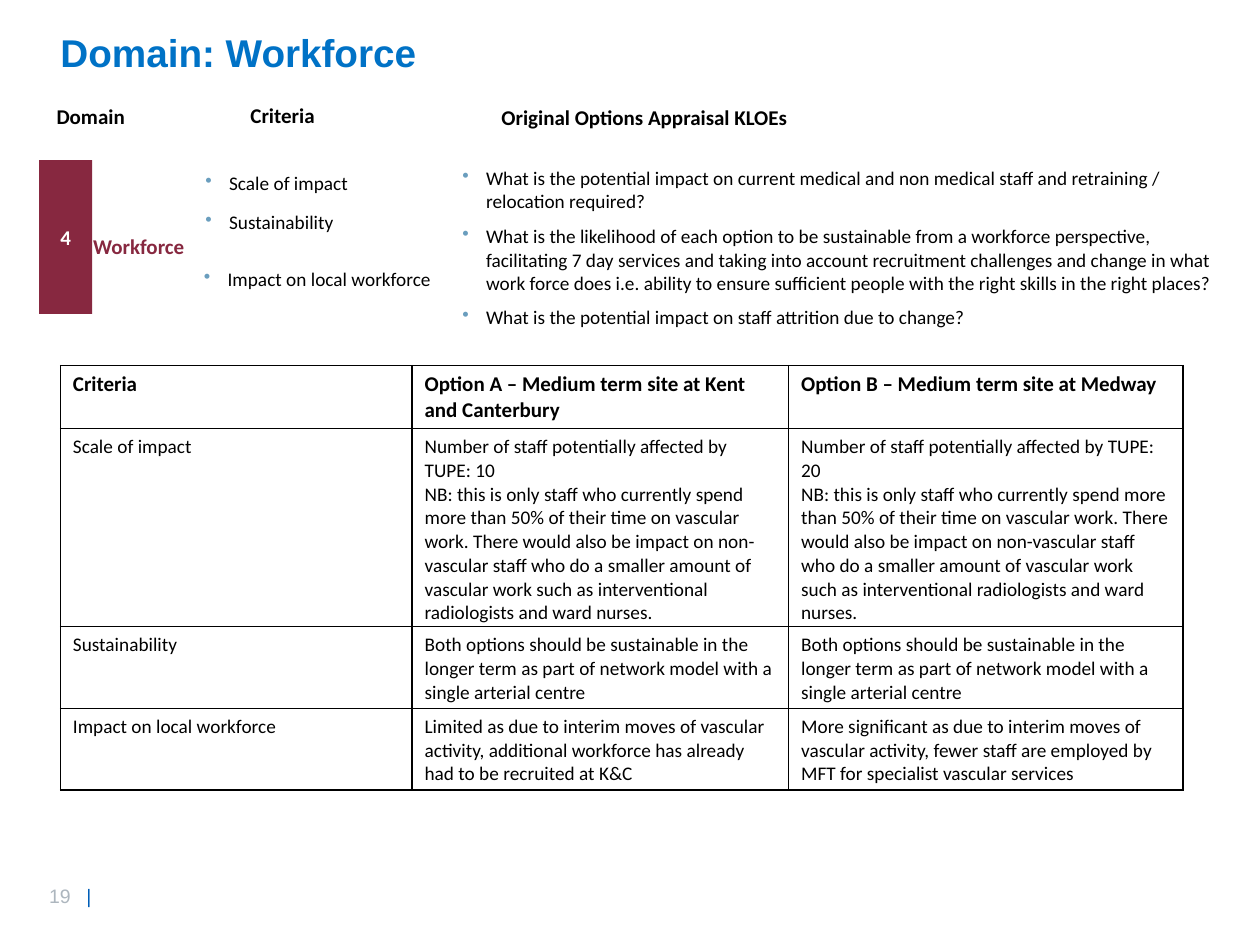
from dataclasses import dataclass

from lxml import etree
from pptx import Presentation
from pptx import util as u
from pptx.dml.color import RGBColor
from pptx.enum import shapes, text
from pptx.oxml.ns import qn


@dataclass(frozen=True)
class Theme:
    heading_font: str = "Arial"
    body_font: str = "Calibri"
    title: str = "0072C6"
    accent: str = "872840"
    bullet: str = "6A9EBE"
    ink: str = "000000"
    paper: str = "FFFFFF"
    number: str = "ADB6BE"
    bar: str = "005EB8"
    title_size: float = 22.1
    label_size: float = 12
    body_size: float = 11
    number_size: float = 11.1
    indent: float = 0.48
    pad_x: float = 0.25
    pad_y: float = 0.13


THEME = Theme()


def add_span(para, words, size, color, bold=False, font=THEME.body_font):
    span = para.add_run()
    span.text = words
    span.font.name = font
    span.font.size = u.Pt(size)
    span.font.bold = bold
    span.font.color.rgb = RGBColor.from_string(color)


def set_margins(target, x, top, bottom):
    target.margin_left = target.margin_right = u.Cm(x)
    target.margin_top = u.Cm(top)
    target.margin_bottom = u.Cm(bottom)


def add_para(page, box, pad_x=0, pad_y=0):
    frame = page.shapes.add_textbox(*map(u.Cm, box)).text_frame
    frame.word_wrap = True
    set_margins(frame, pad_x, pad_y, pad_y)
    return frame.paragraphs[0]


def add_bullet(para):
    props = para._p.get_or_add_pPr()
    props.set("marL", str(u.Cm(THEME.indent)))
    props.set("indent", str(-u.Cm(THEME.indent)))
    color = etree.SubElement(props, qn("a:buClr"))
    etree.SubElement(color, qn("a:srgbClr"), val=THEME.bullet)
    etree.SubElement(props, qn("a:buChar"), char="•")


def add_title(page, box, words):
    para = add_para(page, box, pad_y=THEME.pad_y)
    add_span(para, words, THEME.title_size, THEME.title, True, THEME.heading_font)


def add_column_headings(page, box, headings):
    left, top, _, height = box
    for words, x, y, width in headings:
        para = add_para(page, (left + x, top + y, width, height))
        add_span(para, words, THEME.label_size, THEME.ink, True)


def add_domain(page, box, number, name):
    left, top, width, height = box
    tile_width = 1.07
    tile = page.shapes.add_shape(
        shapes.MSO_SHAPE.RECTANGLE, *map(u.Cm, (left, top, tile_width, height)))
    tile.shadow.inherit = False
    tile.fill.solid()
    tile.fill.fore_color.rgb = RGBColor.from_string(THEME.accent)
    tile.line.fill.background()
    frame = tile.text_frame
    frame.vertical_anchor = text.MSO_ANCHOR.MIDDLE
    para = frame.paragraphs[0]
    para.alignment = text.PP_ALIGN.CENTER
    add_span(para, number, THEME.label_size, THEME.paper, True)
    para = add_para(page, (left + 1.09, top + 1.47, width - 1.09, 0.51))
    add_span(para, name, THEME.label_size, THEME.accent, True)


def add_bullets(page, box, items, pad_x=0, pad_y=0):
    left, top, width, _ = box
    for words, x, y, height in items:
        para = add_para(page, (left + x, top + y, width, height), pad_x, pad_y)
        add_bullet(para)
        add_span(para, words, THEME.body_size, THEME.ink)


def add_borders(cell):
    props = cell._tc.get_or_add_tcPr()
    for position, side in enumerate(("lnL", "lnR", "lnT", "lnB")):
        line = etree.Element(qn(f"a:{side}"), w=str(u.Pt(1)))
        fill = etree.SubElement(line, qn("a:solidFill"))
        etree.SubElement(fill, qn("a:srgbClr"), val=THEME.ink)
        props.insert(position, line)


def add_options_table(page, box, widths, heights, rows):
    frame = page.shapes.add_table(len(rows), len(widths), *map(u.Cm, box))
    table = frame.table
    for column, width in zip(table.columns, widths):
        column.width = u.Cm(width)
    for index, (row, height) in enumerate(zip(table.rows, heights)):
        row.height = u.Cm(height)
        header = index == 0
        size = THEME.label_size if header else THEME.body_size
        for cell, words in zip(row.cells, rows[index]):
            cell.fill.solid()
            cell.fill.fore_color.rgb = RGBColor.from_string(THEME.paper)
            add_borders(cell)
            set_margins(cell, THEME.pad_x, THEME.pad_y, 0)
            for position, line in enumerate(words.split("\n")):
                body = cell.text_frame
                para = body.add_paragraph() if position else body.paragraphs[0]
                add_span(para, line, size, THEME.ink, header)


def add_page_number(page, box, number):
    para = add_para(page, box, THEME.pad_x, THEME.pad_y)
    tabs = etree.SubElement(para._p.get_or_add_pPr(), qn("a:tabLst"))
    etree.SubElement(tabs, qn("a:tab"), pos=str(u.Cm(0.75)), algn="l")
    for words, color in ((number, THEME.number), ("\t|", THEME.bar)):
        add_span(para, words, THEME.number_size, color, font=THEME.heading_font)


def main():
    deck = Presentation()
    deck.slide_width, deck.slide_height = u.Cm(25.4), u.Cm(19.05)
    page = deck.slides.add_slide(deck.slide_layouts[6])

    add_page_number(page, (0.74, 17.7, 1.65, 0.74), "19")
    add_title(page, (1.22, 0.46, 20.78, 2.31), "Domain: Workforce")
    add_column_headings(page, (1.14, 2.06, 15.34, 0.51), [
        ("Domain", 0, 0.02, 3.7),
        ("Criteria", 3.91, 0, 4.62),
        ("Original Options Appraisal KLOEs", 8.97, 0.05, 6.38),
    ])
    add_domain(page, (0.79, 3.23, 3.32, 3.1), "4", "Workforce")

    criteria = ["Scale of impact", "Sustainability", "Impact on local workforce"]
    add_bullets(page, (4.14, 3.45, 4.65, 2.42), [
        (criteria[0], 0, 0, 0.48),
        (criteria[1], 0, 0.79, 0.48),
        (criteria[2], -0.03, 1.93, 0.48),
    ])
    add_bullets(page, (9.07, 3.23, 15.93, 3.53), [
        ("What is the potential impact on current medical and non medical staff "
         "and retraining / relocation required?", 0, 0, 1.19),
        ("What is the likelihood of each option to be sustainable from a workforce "
         "perspective, facilitating 7 day services and taking into account "
         "recruitment challenges and change in what work force does i.e. ability "
         "to ensure sufficient people with the right skills in the right places?",
         0, 1.17, 1.68),
        ("What is the potential impact on staff attrition due to change?",
         0, 2.8, 0.74),
    ], THEME.pad_x, THEME.pad_y)

    affected = (
        "Number of staff potentially affected by TUPE: {}\n"
        "NB: this is only staff who currently spend more than 50% of their time on "
        "vascular work. There would also be impact on non-vascular staff who do a "
        "smaller amount of vascular work such as interventional radiologists and "
        "ward nurses.")
    sustainable = (
        "Both options should be sustainable in the longer term as part of network "
        "model with a single arterial centre")
    add_options_table(
        page, (1.22, 7.37, 22.63, 8.56), (7.09, 7.59, 7.95), (1.27, 3.99, 1.65, 1.65), [
            ("Criteria", "Option A – Medium term site at Kent and Canterbury",
             "Option B – Medium term site at Medway"),
            (criteria[0], affected.format(10), affected.format(20)),
            (criteria[1], sustainable, sustainable),
            (criteria[2],
             "Limited as due to interim moves of vascular activity, additional "
             "workforce has already had to be recruited at K&C",
             "More significant as due to interim moves of vascular activity, fewer "
             "staff are employed by MFT for specialist vascular services"),
        ])
    deck.save("out.pptx")


if __name__ == "__main__":
    main()
